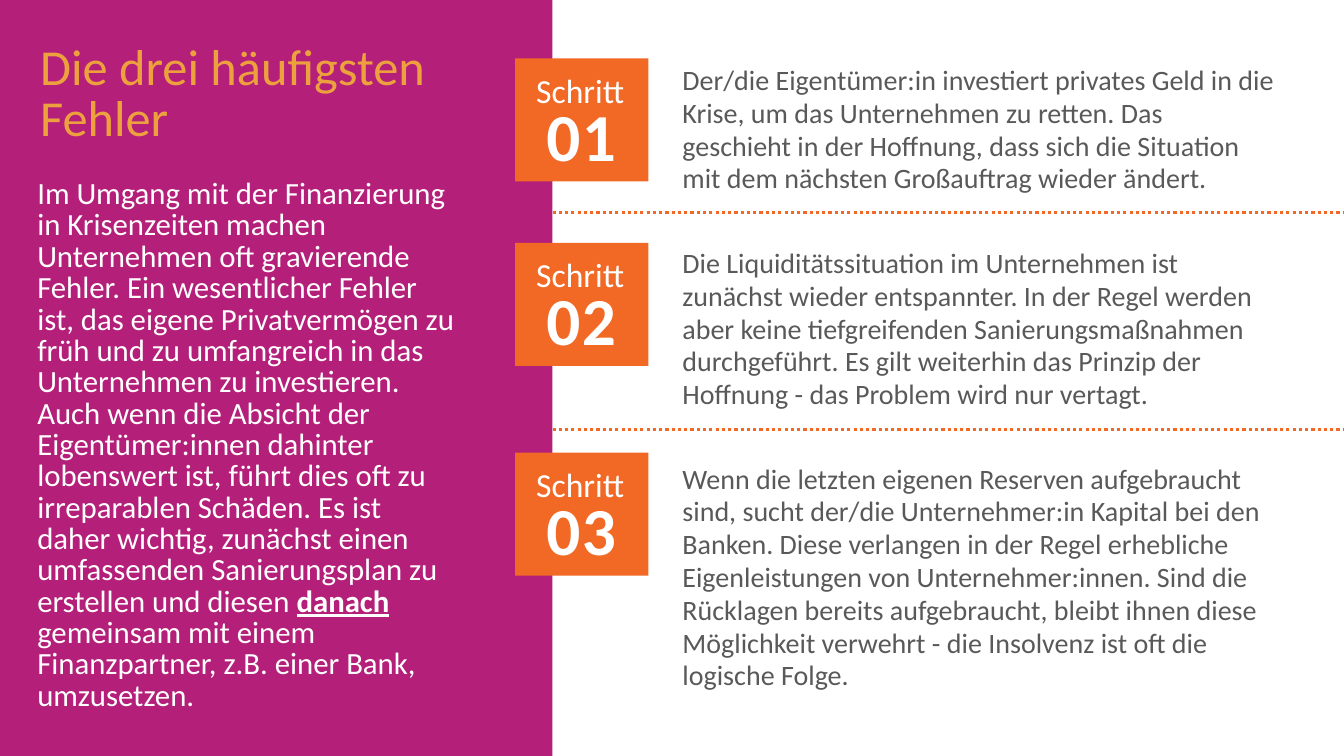
from lxml import etree
from pptx import Presentation
from pptx.dml.color import RGBColor
from pptx.enum.dml import MSO_LINE
from pptx.enum.shapes import MSO_CONNECTOR, MSO_SHAPE
from pptx.enum.text import MSO_ANCHOR, PP_ALIGN
from pptx.oxml.ns import qn
from pptx.util import Inches, Pt

RECTANGLE = MSO_SHAPE.RECTANGLE
STRAIGHT = MSO_CONNECTOR.STRAIGHT
DOTTED = MSO_LINE.ROUND_DOT
LEFT, CENTER = PP_ALIGN.LEFT, PP_ALIGN.CENTER
TOP, MIDDLE = MSO_ANCHOR.TOP, MSO_ANCHOR.MIDDLE

FONT = "Calibri"
COLORS = {"panel": "B41F7A", "accent": "F16924", "title": "EDA13E",
          "light": "FFFFFF", "body": "595959"}
SLIDE_WIDTH, SLIDE_HEIGHT = 13.33, 7.5
PANEL_WIDTH = 5.48

TITLE = "Die drei häufigsten Fehler"
INTRO = [
    "Im Umgang mit der Finanzierung in Krisenzeiten machen Unternehmen oft "
    "gravierende Fehler. Ein wesentlicher Fehler ist, das eigene Privatvermögen "
    "zu früh und zu umfangreich in das Unternehmen zu investieren. Auch wenn die "
    "Absicht der Eigentümer:innen dahinter lobenswert ist, führt dies oft zu "
    "irreparablen Schäden. Es ist daher wichtig, zunächst einen umfassenden "
    "Sanierungsplan zu erstellen und diesen ",
    "danach",
    " gemeinsam mit einem Finanzpartner, z.B. einer Bank, umzusetzen.",
]
STEPS = [
    "Der/die Eigentümer:in investiert privates Geld in die Krise, um das "
    "Unternehmen zu retten. Das geschieht in der Hoffnung, dass sich die "
    "Situation mit dem nächsten Großauftrag wieder ändert.",
    "Die Liquiditätssituation im Unternehmen ist zunächst wieder entspannter. In "
    "der Regel werden aber keine tiefgreifenden Sanierungsmaßnahmen "
    "durchgeführt. Es gilt weiterhin das Prinzip der Hoffnung - das Problem wird "
    "nur vertagt.",
    "Wenn die letzten eigenen Reserven aufgebraucht sind, sucht der/die "
    "Unternehmer:in Kapital bei den Banken. Diese verlangen in der Regel "
    "erhebliche Eigenleistungen von Unternehmer:innen. Sind die Rücklagen "
    "bereits aufgebraucht, bleibt ihnen diese Möglichkeit verwehrt - die "
    "Insolvenz ist oft die logische Folge.",
]
BADGE_TOPS = [0.58, 2.41, 4.49]
DIVIDER_TOPS = [2.11, 4.26]


def rgb(color):
    """Return the named colour."""
    return RGBColor.from_string(COLORS[color])


def add_block(shapes, left, top, width, height, color):
    """Draw a plain filled rectangle."""
    block = shapes.add_shape(RECTANGLE, Inches(left), Inches(top),
                             Inches(width), Inches(height))
    block.shadow.inherit = False
    block.fill.solid()
    block.fill.fore_color.rgb = rgb(color)
    block.line.fill.background()


def add_text(shapes, left, top, width, height, paragraphs, size, color,
             align=LEFT, anchor=TOP, line=None, gap=0, bold=False,
             emphasis=None, spacing=None, inset=(0.1, 0.05)):
    """Write paragraphs, each a list of runs, in a text box."""
    frame = shapes.add_textbox(Inches(left), Inches(top), Inches(width),
                               Inches(height)).text_frame
    frame.word_wrap = True
    frame.vertical_anchor = anchor
    frame.margin_left = frame.margin_right = Inches(inset[0])
    frame.margin_top = frame.margin_bottom = Inches(inset[1])
    for index, runs in enumerate(paragraphs):
        paragraph = frame.add_paragraph() if index else frame.paragraphs[0]
        paragraph.alignment = align
        paragraph.space_before = Pt(gap if index else 0)
        if line:
            paragraph.line_spacing = Pt(line)
        for text in runs:
            run = paragraph.add_run()
            run.text = text
            run.font.name = FONT
            run.font.size = Pt(size)
            run.font.color.rgb = rgb(color)
            run.font.bold = bold or text == emphasis
            run.font.underline = text == emphasis
            if spacing:
                run.font._element.set("spc", str(round(spacing * 100)))


def add_divider(shapes, top):
    """Draw a dotted line from the panel to the right edge."""
    divider = shapes.add_connector(STRAIGHT, Inches(PANEL_WIDTH), Inches(top),
                                   Inches(SLIDE_WIDTH), Inches(top))
    divider.line.color.rgb = rgb("accent")
    divider.line.width = Pt(2.25)
    divider.line.dash_style = DOTTED
    etree.SubElement(divider._element.spPr, qn("a:effectLst"))


def add_badge(slide, number, top):
    """Group a step's square with its label and number."""
    shapes = slide.shapes.add_group_shape().shapes
    add_block(shapes, 5.11, top, 1.32, 1.22, "accent")
    add_text(shapes, 5.21, top + 0.06, 1.09, 0.5, [["Schritt"]], 24, "light",
             align=CENTER)
    add_text(shapes, 5.3, top + 0.35, 0.93, 0.81, [[f"{number:02d}"]], 48,
             "light", align=CENTER, anchor=MIDDLE, bold=True, spacing=1.1,
             inset=(0, 0))


def main():
    """Build and save the slide."""
    deck = Presentation()
    deck.slide_width, deck.slide_height = Inches(SLIDE_WIDTH), Inches(SLIDE_HEIGHT)
    slide = deck.slides.add_slide(deck.slide_layouts[6])
    shapes = slide.shapes
    add_block(shapes, 0, 0, PANEL_WIDTH, SLIDE_HEIGHT, "panel")
    add_text(shapes, 0.3, 0.4, 4.26, 1.2, [[TITLE]], 36, "title", line=36.2)
    add_text(shapes, 0.28, 1.74, 4.37, 5.34, [INTRO], 22, "light", line=22.4,
             emphasis="danach", inset=(0.09, 0.04))
    add_text(shapes, 6.67, 0.58, 6.1, 6.3, [[step] for step in STEPS], 20, "body",
             line=23.4, gap=37)
    for top in DIVIDER_TOPS:
        add_divider(shapes, top)
    for number, top in enumerate(BADGE_TOPS, start=1):
        add_badge(slide, number, top)
    deck.save("out.pptx")


if __name__ == "__main__":
    main()
